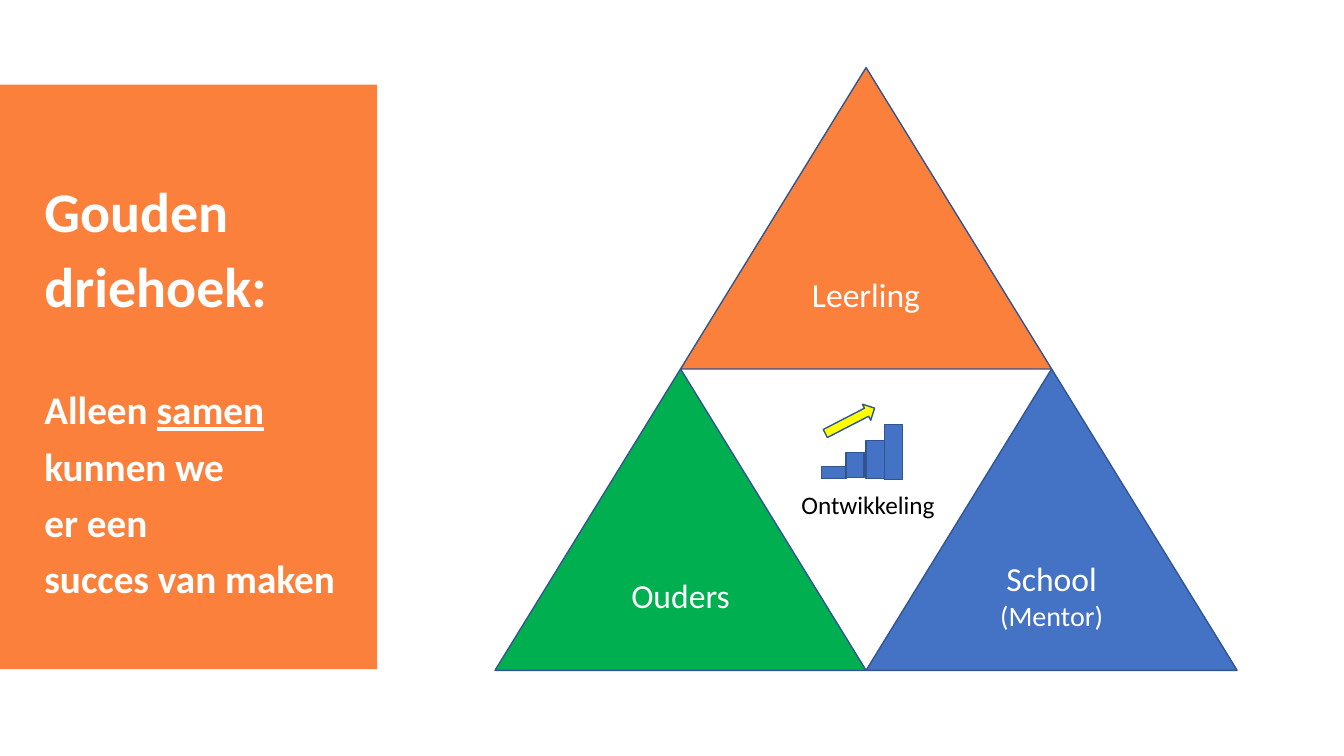
"""Build the slide with the golden triangle of pupil, parents and school."""
from dataclasses import dataclass

from pptx import Presentation
from pptx.dml.color import RGBColor
from pptx.enum.shapes import MSO_SHAPE
from pptx.enum.text import MSO_ANCHOR, MSO_AUTO_SIZE, PP_ALIGN
from pptx.oxml.xmlchemy import OxmlElement
from pptx.util import Pt


@dataclass(frozen=True)
class Theme:
    font: str = "Calibri"
    orange: str = "FA803C"
    green: str = "00B050"
    blue: str = "4472C4"
    yellow: str = "FFFF00"
    outline: str = "325491"
    white: str = "FFFFFF"
    black: str = "000000"
    heading: int = 40
    motto: int = 28
    label: int = 24
    sublabel: int = 20
    caption: int = 18


THEME = Theme()
PX = 9144


def add_figure(shapes, kind, bounds, fill, line=THEME.outline):
    figure = shapes.add_shape(kind, *[value * PX for value in bounds])
    figure.shadow.inherit = False
    figure.fill.solid()
    figure.fill.fore_color.rgb = RGBColor.from_string(fill)
    if line:
        figure.line.color.rgb = RGBColor.from_string(line)
        figure.line.width = Pt(1)
    else:
        figure.line.fill.background()
    return figure


def add_span(para, text, size, color=THEME.white, bold=False, underline=False):
    span = para.add_run()
    span.text = text
    span.font.name = THEME.font
    span.font.size = Pt(size)
    span.font.color.rgb = RGBColor.from_string(color)
    span.font.bold = bold
    span.font.underline = underline


deck = Presentation()
deck.slide_width, deck.slide_height = 1333 * PX, 750 * PX
page = deck.slides.add_slide(deck.slide_layouts[1])
title = page.shapes.title.element
title.getparent().remove(title)

panel = add_figure(page.shapes, MSO_SHAPE.RECTANGLE, (-4, 84, 378, 580), THEME.orange, None)
body = page.placeholders[1]
body.element.addprevious(panel.element)
body.left, body.top, body.width, body.height = [value * PX for value in (34, 178, 330, 448)]
body.text_frame.auto_size = MSO_AUTO_SIZE.NONE
body.text_frame.word_wrap = True
body.text_frame.vertical_anchor = MSO_ANCHOR.TOP

message = [
    (["Gouden"], THEME.heading, 10),
    (["driehoek:"], THEME.heading, 10),
    (["Alleen ", "samen"], THEME.motto, 51),
    (["kunnen we"], THEME.motto, 10),
    (["er een"], THEME.motto, 10),
    (["succes van maken"], THEME.motto, 10),
]
for index, (words, size, gap) in enumerate(message):
    para = body.text_frame.add_paragraph() if index else body.text_frame.paragraphs[0]
    para.line_spacing = 0.9
    para.space_before = Pt(gap)
    para.space_after = Pt(0)
    settings = para._p.get_or_add_pPr()
    settings.set("marL", "0")
    settings.set("indent", "0")
    settings.append(OxmlElement("a:buNone"))
    for word in words:
        add_span(para, word, size, bold=True, underline=word == "samen")

diagram = page.shapes.add_group_shape().shapes
side, rise = 368, 299
left, top = 491, 67
triangles = [
    (0, 1, THEME.green, [("Ouders", THEME.label)]),
    (1, 1, THEME.blue, [("School", THEME.label), ("(Mentor)", THEME.sublabel)]),
    (0.5, 0, THEME.orange, [("Leerling", THEME.label)]),
]
for column, row, color, lines in triangles:
    bounds = (left + int(column * side), top + row * rise, side, rise)
    triangle = add_figure(diagram, MSO_SHAPE.ISOSCELES_TRIANGLE, bounds, color)
    frame = triangle.text_frame
    frame.vertical_anchor = MSO_ANCHOR.MIDDLE
    for index, (text, size) in enumerate(lines):
        para = frame.add_paragraph() if index else frame.paragraphs[0]
        para.alignment = PP_ALIGN.CENTER
        add_span(para, text, size)

caption = diagram.add_textbox(785 * PX, 481 * PX, 153 * PX, 38 * PX)
caption.text_frame.word_wrap = False
caption.text_frame.auto_size = MSO_AUTO_SIZE.SHAPE_TO_FIT_TEXT
add_span(caption.text_frame.paragraphs[0], "Ontwikkeling", THEME.caption, THEME.black)

bars = [(815, 463, 24, 12), (839, 449, 18, 25), (859, 437, 18, 38), (877, 421, 18, 55)]
for bounds in bars:
    add_figure(diagram, MSO_SHAPE.RECTANGLE, bounds, THEME.blue)
growth = add_figure(diagram, MSO_SHAPE.UP_ARROW, (834, 390, 18, 55), THEME.yellow)
growth.rotation = 62.7

deck.save("out.pptx")
